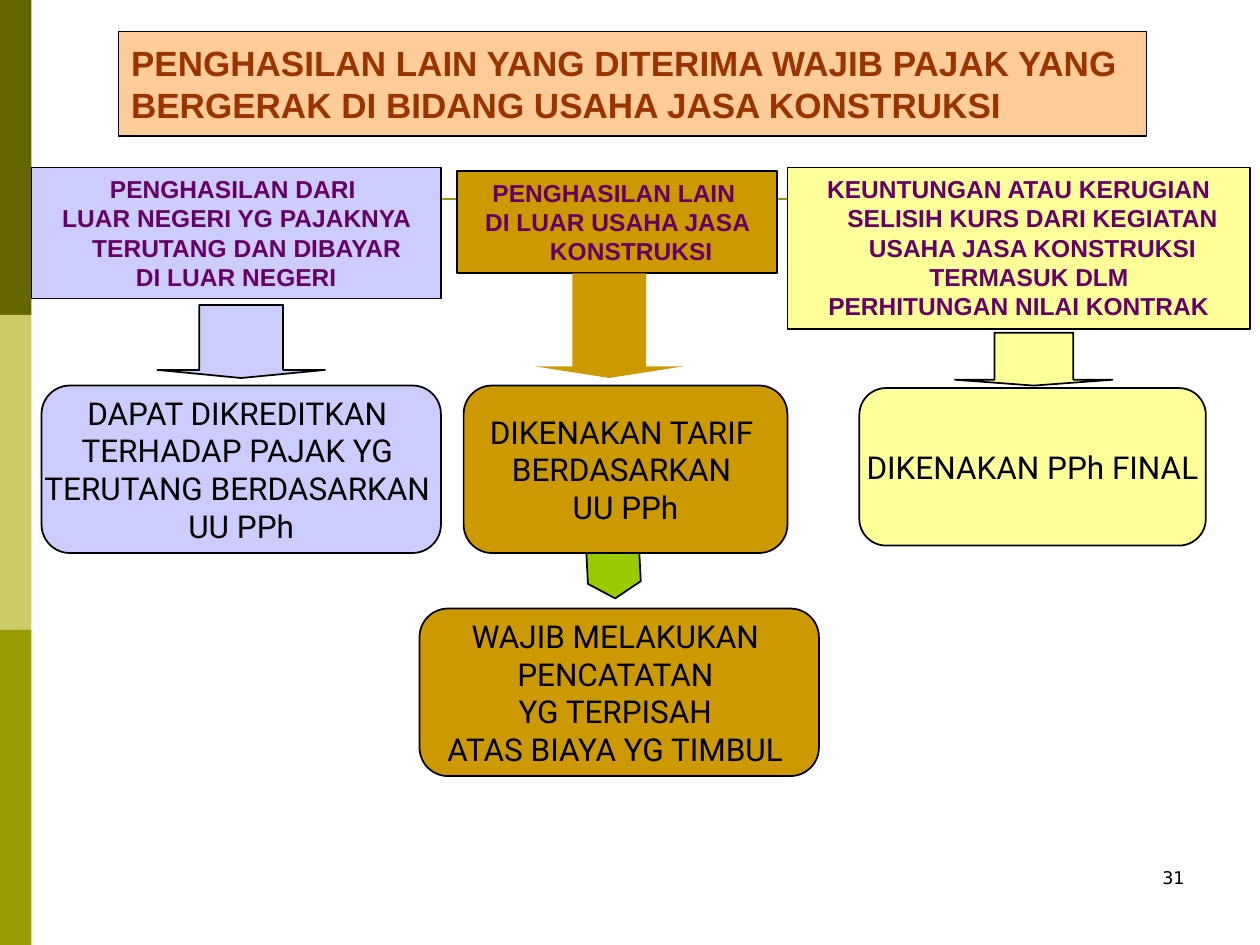
"""Build the slide on other income of construction service taxpayers."""
from lxml import etree
from pptx import Presentation
from pptx.dml.color import RGBColor
from pptx.enum import shapes, text
from pptx.oxml import ns
from pptx.util import Inches, Pt

COLORS = {
    "ink": "000000", "heading": "993300", "peach": "FFCC99", "plum": "660066",
    "lilac": "CCCCFF", "ochre": "CC9900", "lemon": "FFFF99", "lime": "99CC00",
    "dark olive": "666600", "pale olive": "CCCC66", "olive": "999900",
}
TITLE = "PENGHASILAN LAIN YANG DITERIMA WAJIB PAJAK YANG BERGERAK DI BIDANG USAHA JASA KONSTRUKSI"
BANDS = ["dark olive", "pale olive", "olive"]
SOURCES = [
    ("lilac", (0.25, 1.33, 3.25, 1.04),
     ["PENGHASILAN DARI ", "LUAR NEGERI YG PAJAKNYA TERUTANG DAN DIBAYAR ", "DI LUAR NEGERI"]),
    ("ochre", (3.63, 1.36, 2.54, 0.81),
     ["PENGHASILAN LAIN ", "DI LUAR USAHA JASA KONSTRUKSI"]),
    ("lemon", (6.25, 1.33, 3.67, 1.28),
     ["KEUNTUNGAN ATAU KERUGIAN SELISIH KURS DARI KEGIATAN USAHA JASA KONSTRUKSI TERMASUK DLM ",
      "PERHITUNGAN NILAI KONTRAK"]),
]
ARROWS = [
    ("lilac", (1.25, 2.42, 1.33, 0.58), "ink"),
    ("ochre", (4.25, 2.17, 1.17, 0.83), None),
    ("lemon", (7.58, 2.64, 1.25, 0.42), "ink"),
]
TREATMENTS = [
    ("lilac", (0.33, 3.06, 3.17, 1.33),
     ["DAPAT DIKREDITKAN ", "TERHADAP PAJAK YG ", "TERUTANG BERDASARKAN ", "UU PPh"]),
    ("lemon", (6.82, 3.08, 2.75, 1.25), ["DIKENAKAN PPh FINAL"]),
    ("ochre", (3.33, 4.83, 3.17, 1.33),
     ["WAJIB MELAKUKAN ", "PENCATATAN ", "YG TERPISAH ", "ATAS BIAYA YG TIMBUL "]),
    ("ochre", (3.68, 3.06, 2.57, 1.33), ["DIKENAKAN TARIF ", "BERDASARKAN ", "UU PPh"]),
]
KIND = shapes.MSO_SHAPE
ALIGN = text.PP_ALIGN
ANCHOR = text.MSO_ANCHOR


def rgb(color):
    return RGBColor.from_string(COLORS[color])


def paint(item, fill, line="ink"):
    item.fill.solid()
    item.fill.fore_color.rgb = rgb(fill)
    if line:
        item.line.color.rgb = rgb(line)
        item.line.width = Pt(1)
    else:
        item.line.fill.background()


def add_preset(slide, kind, box, fill, line="ink", adjust=()):
    item = slide.shapes.add_shape(kind, *map(Inches, box))
    item.shadow.inherit = False
    paint(item, fill, line)
    for index, value in enumerate(adjust):
        item.adjustments[index] = value
    return item


def write(item, lines, font, size, color, align, anchor, bold=False, wrap=True, hanging=0):
    frame = item.text_frame
    frame.text = "\n".join(lines)
    frame.auto_size = text.MSO_AUTO_SIZE.NONE
    frame.word_wrap = wrap
    frame.vertical_anchor = anchor
    for paragraph in frame.paragraphs:
        paragraph.alignment = align
        paragraph.font.name = font
        paragraph.font.size = Pt(size)
        paragraph.font.bold = bold
        paragraph.font.color.rgb = rgb(color)
        if hanging:
            properties = paragraph._p.get_or_add_pPr()
            properties.set("marL", str(Inches(hanging)))
            properties.set("indent", str(-Inches(hanging)))


def add_background(slide):
    for row, color in enumerate(BANDS):
        add_preset(slide, KIND.RECTANGLE, (0, row * 2.5, 0.25, 2.5), color, None)
    rule = slide.shapes.add_connector(
        shapes.MSO_CONNECTOR.STRAIGHT, *map(Inches, (0.5, 1.58, 9.33, 1.58)))
    rule.line.color.rgb = rgb("olive")
    rule.line.width = Pt(1.5)
    etree.SubElement(rule._element.spPr, ns.qn("a:effectLst"))


def add_title(slide):
    title = slide.shapes.title
    title.left, title.top, title.width, title.height = map(Inches, (0.94, 0.25, 8.16, 0.83))
    paint(title, "peach")
    write(title, [TITLE], "Arial", 20, "heading", ALIGN.LEFT, ANCHOR.MIDDLE, bold=True)


def main():
    deck = Presentation()
    deck.slide_width, deck.slide_height = Inches(10), Inches(7.5)
    slide = deck.slides.add_slide(deck.slide_layouts[5])
    add_background(slide)
    add_title(slide)

    number = slide.shapes.add_textbox(*map(Inches, (7.17, 6.83, 2.33, 0.5)))
    write(number, ["31"], "DejaVu Sans", 10, "ink", ALIGN.RIGHT, ANCHOR.TOP)

    for fill, box, lines in SOURCES:
        source = add_preset(slide, KIND.RECTANGLE, box, fill)
        write(source, lines, "Arial", 14, "plum", ALIGN.CENTER, ANCHOR.TOP, bold=True, hanging=0.22)
    for fill, box, line in ARROWS:
        add_preset(slide, KIND.DOWN_ARROW, box, fill, line, (0.5, 0.11))

    chevron = add_preset(slide, KIND.CHEVRON, (4.62, 4.29, 0.5, 0.42), "lime", adjust=(0.3,))
    chevron.rotation = 87.1

    for fill, box, lines in TREATMENTS:
        treatment = add_preset(slide, KIND.ROUNDED_RECTANGLE, box, fill, adjust=(0.17,))
        write(treatment, lines, "Roboto", 18, "ink", ALIGN.CENTER, ANCHOR.MIDDLE, wrap=False)

    deck.save("out.pptx")


if __name__ == "__main__":
    main()
